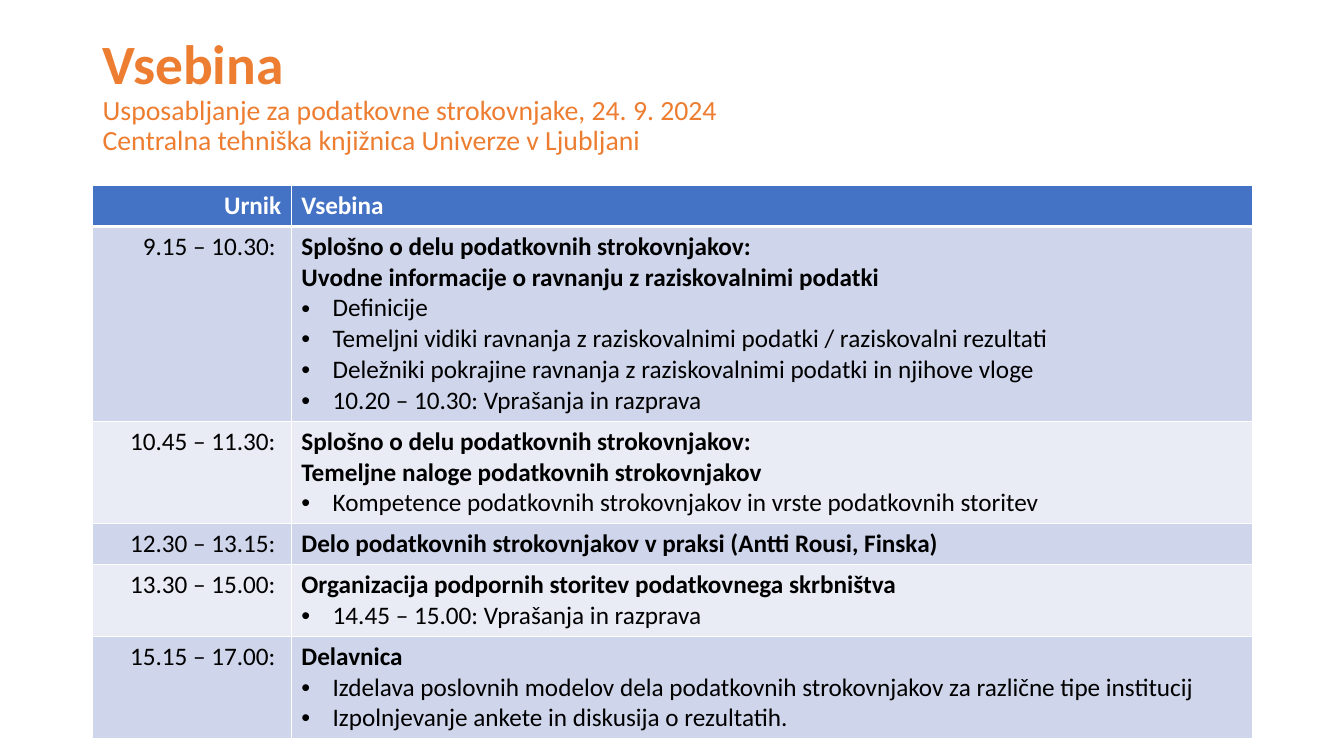
from dataclasses import dataclass

from lxml import etree
from pptx import Presentation
from pptx import util as u
from pptx.dml.color import RGBColor
from pptx.enum import text
from pptx.oxml import ns

FONT = "Calibri"
COLORS = {
    "title": "ED7D31",
    "head": "4472C4",
    "odd": "CFD5EA",
    "even": "E9EBF5",
    "white": "FFFFFF",
    "black": "000000",
}
LEFT, TOP = 0.92, 1.84
WIDTHS = (1.97, 9.53)
LINE = 22 / 72  # height of one 18 pt text line
PAD = 0.1
INDENT = 0.31


@dataclass
class Slot:
    time: str
    heads: list[str]
    points: list[str]


SLOTS = [
    Slot("9.15 – 10.30: ",
         ["Splošno o delu podatkovnih strokovnjakov:",
          "Uvodne informacije o ravnanju z raziskovalnimi podatki"],
         ["Definicije",
          "Temeljni vidiki ravnanja z raziskovalnimi podatki / raziskovalni rezultati",
          "Deležniki pokrajine ravnanja z raziskovalnimi podatki in njihove vloge",
          "10.20 – 10.30: Vprašanja in razprava"]),
    Slot("10.45 – 11.30: ",
         ["Splošno o delu podatkovnih strokovnjakov:",
          "Temeljne naloge podatkovnih strokovnjakov"],
         ["Kompetence podatkovnih strokovnjakov in vrste podatkovnih storitev"]),
    Slot("12.30 – 13.15: ",
         ["Delo podatkovnih strokovnjakov v praksi (Antti Rousi, Finska)"], []),
    Slot("13.30 – 15.00: ",
         ["Organizacija podpornih storitev podatkovnega skrbništva"],
         ["14.45 – 15.00: Vprašanja in razprava"]),
    Slot("15.15 – 17.00: ",
         ["Delavnica"],
         ["Izdelava poslovnih modelov dela podatkovnih strokovnjakov za različne tipe institucij",
          "Izpolnjevanje ankete in diskusija o rezultatih."]),
]


def style(font, size: float, color: str, bold: bool) -> None:
    font.name, font.size, font.bold = FONT, u.Pt(size), bold
    font.color.rgb = RGBColor.from_string(COLORS[color])


def bullet(para) -> None:
    props = para._p.get_or_add_pPr()
    props.set("marL", str(u.Inches(INDENT)))
    props.set("indent", str(-u.Inches(INDENT)))
    etree.SubElement(props, ns.qn("a:buFont"), typeface="Arial")
    etree.SubElement(props, ns.qn("a:buChar"), char="•")


def border(cell, row: int) -> None:
    """White cell lines, thicker below the header."""
    props = cell._tc.get_or_add_tcPr()
    for side in "LRTB":
        thick = (row, side) in ((0, "B"), (1, "T"))
        line = etree.SubElement(props, ns.qn(f"a:ln{side}"),
                                w=str(u.Pt(3 if thick else 1)))
        fill = etree.SubElement(line, ns.qn("a:solidFill"))
        etree.SubElement(fill, ns.qn("a:srgbClr"), val=COLORS["white"])


def write(cell, heads: list[str], points: list[str], color: str,
          bold: bool = True, right: bool = False) -> None:
    frame = cell.text_frame
    for i, words in enumerate(heads + points):
        para = frame.paragraphs[0] if i == 0 else frame.add_paragraph()
        para.text = words
        if right:
            para.alignment = text.PP_ALIGN.RIGHT
        if i >= len(heads):
            bullet(para)
        style(para.font, 18, color, bold and i < len(heads))


def title(slide) -> None:
    box = slide.shapes.add_textbox(u.Inches(LEFT), u.Inches(0.37),
                                   u.Inches(12.2), u.Inches(1.47))
    frame = box.text_frame
    frame.word_wrap = True
    frame.vertical_anchor = text.MSO_ANCHOR.MIDDLE
    frame.margin_bottom = u.Inches(0.35)
    para = frame.paragraphs[0]
    para.line_spacing = 0.9
    lines = [("Vsebina", 39.6),
             ("Usposabljanje za podatkovne strokovnjake, 24. 9. 2024", 19.8),
             ("Centralna tehniška knjižnica Univerze v Ljubljani", 19.8)]
    for i, (words, size) in enumerate(lines):
        if i:
            para.add_line_break()
        run = para.add_run()
        run.text = words
        style(run.font, size, "title", i == 0)


def agenda(slide) -> None:
    counts = [1] + [len(s.heads + s.points) for s in SLOTS]
    highs = [PAD + LINE * n for n in counts]
    table = slide.shapes.add_table(
        len(highs), len(WIDTHS), u.Inches(LEFT), u.Inches(TOP),
        u.Inches(sum(WIDTHS)), u.Inches(sum(highs))).table
    for col, width in zip(table.columns, WIDTHS):
        col.width = u.Inches(width)
    for i, high in enumerate(highs):
        table.rows[i].height = u.Inches(high)
        fill = "head" if i == 0 else "odd" if i % 2 else "even"
        for cell in table.rows[i].cells:
            border(cell, i)
            cell.fill.solid()
            cell.fill.fore_color.rgb = RGBColor.from_string(COLORS[fill])

    # Header row
    write(table.cell(0, 0), ["Urnik"], [], "white", right=True)
    write(table.cell(0, 1), ["Vsebina"], [], "white")

    # Time slots
    for i, slot in enumerate(SLOTS, 1):
        write(table.cell(i, 0), [slot.time], [], "black", bold=False, right=True)
        write(table.cell(i, 1), slot.heads, slot.points, "black")


def main() -> None:
    deck = Presentation()
    deck.slide_width, deck.slide_height = u.Inches(13.33), u.Inches(7.5)
    slide = deck.slides.add_slide(deck.slide_layouts[6])
    title(slide)
    agenda(slide)
    deck.save("out.pptx")


if __name__ == "__main__":
    main()
